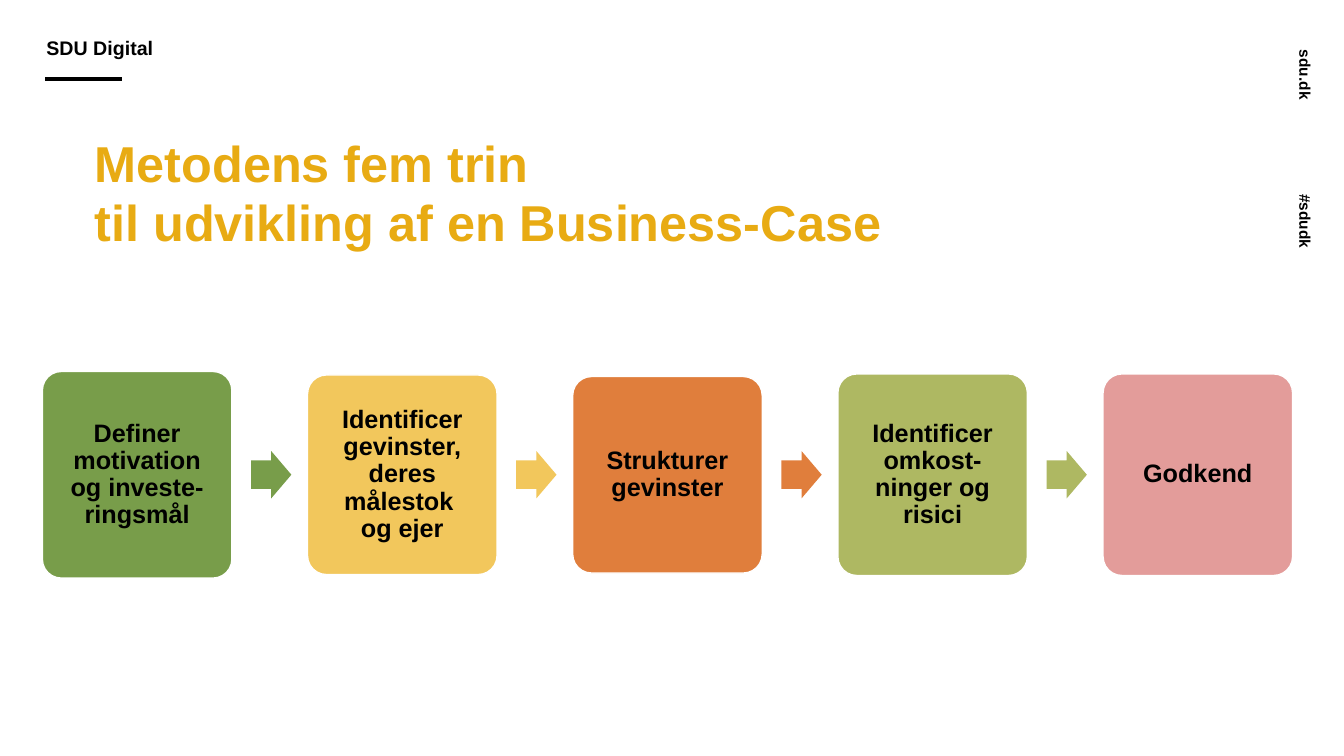
from dataclasses import dataclass

from lxml.etree import SubElement
from pptx import Presentation
from pptx.dml.color import RGBColor
from pptx.enum.shapes import MSO_CONNECTOR, MSO_SHAPE
from pptx.enum.text import MSO_ANCHOR, PP_ALIGN
from pptx.oxml.ns import qn
from pptx.shapes.autoshape import Shape
from pptx.slide import Slide
from pptx.util import Inches, Pt


@dataclass(frozen=True)
class Theme:
    font: str = "Arial"
    ink: str = "000000"
    edge: str = "FFFFFF"
    title: str = "E8AB13"
    title_size: int = 36
    step_size: int = 18
    header_size: int = 14
    side_size: int = 11


@dataclass(frozen=True)
class Step:
    text: str
    color: str
    height: float


@dataclass(frozen=True)
class Label:
    text: str
    box: tuple[float, float, float, float]
    size: int
    color: str
    anchor: MSO_ANCHOR = MSO_ANCHOR.BOTTOM
    margins: tuple[float, float, float, float] = (0, 0, 0, 0)
    spacing: float = 1.0
    rotation: float = 0


THEME = Theme()

STEPS = [
    Step("Definer motivation og investe-ringsmål", "789D4A", 2.05),
    Step("Identificer gevinster, deres målestok \nog ejer", "F2C75C", 1.98),
    Step("Strukturer\ngevinster", "E07E3C", 1.95),
    Step("Identificer omkost- ninger og risici", "AEB862", 2.0),
    Step("Godkend", "E39C9A", 2.0),
]
LEFT, PITCH, MIDDLE, STEP_WIDTH = 0.42, 2.63, 4.71, 1.88
ARROW_OFFSET, ARROW_WIDTH, ARROW_HEIGHT = 2.07, 0.4, 0.47

LABELS = [
    Label("SDU Digital", (0.45, 0.38, 5.54, 0.31), THEME.header_size, THEME.ink,
          margins=(0.01, 0, 0, 0.1), spacing=0.9),
    Label("Metodens fem trin\ntil udvikling af en Business-Case",
          (0.94, 1.35, 11.26, 1.4), THEME.title_size, THEME.title,
          anchor=MSO_ANCHOR.TOP, spacing=0.97),
    *(Label(text, (12.56, top, 1, 0.41), THEME.side_size, THEME.ink, rotation=90)
      for text, top in (("sdu.dk", 0.79), ("#sdudk", 2.22))),
]


def write(sp: Shape, text: str, size: int, color: str, anchor: MSO_ANCHOR,
          margins: tuple[float, float, float, float], spacing: float,
          align: PP_ALIGN = PP_ALIGN.LEFT) -> None:
    tf = sp.text_frame
    left, top, right, bottom = map(Inches, margins)
    frame_format = {
        "word_wrap": True, "vertical_anchor": anchor,
        "margin_left": left, "margin_top": top,
        "margin_right": right, "margin_bottom": bottom,
    }
    for name, value in frame_format.items():
        setattr(tf, name, value)
    p = tf.paragraphs[0]
    p.text = text.replace("\n", "\v")
    p.alignment, p.line_spacing = align, spacing
    for r in p.runs:
        for name, value in {"name": THEME.font, "size": Pt(size), "bold": True}.items():
            setattr(r.font, name, value)
        r.font.color.rgb = RGBColor.from_string(color)


def add_label(s: Slide, label: Label) -> None:
    sp = s.shapes.add_textbox(*map(Inches, label.box))
    sp.rotation = label.rotation
    write(sp, label.text, label.size, label.color, label.anchor,
          label.margins, label.spacing)


def add_block(s: Slide, kind: MSO_SHAPE, left: float, width: float, height: float,
              color: str, adjustments: tuple[float, ...]) -> Shape:
    """Add a filled shape centred on the row of steps."""
    box = (left, MIDDLE - height / 2, width, height)
    sp = s.shapes.add_shape(kind, *map(Inches, box))
    sp.shadow.inherit = False
    sp.fill.solid()
    sp.fill.fore_color.rgb = RGBColor.from_string(color)
    sp.line.fill.background()
    for i, value in enumerate(adjustments):
        sp.adjustments[i] = value
    return sp


def add_step(s: Slide, step: Step, left: float) -> None:
    sp = add_block(s, MSO_SHAPE.ROUNDED_RECTANGLE, left, STEP_WIDTH, step.height,
                   step.color, (0.1,))
    sp.line.color.rgb = RGBColor.from_string(THEME.edge)
    sp.line.width = Pt(1)
    write(sp, step.text, THEME.step_size, THEME.ink, MSO_ANCHOR.MIDDLE,
          (0.07,) * 4, 0.9, PP_ALIGN.CENTER)


def add_rule(s: Slide) -> None:
    rule = s.shapes.add_connector(MSO_CONNECTOR.STRAIGHT,
                                  *map(Inches, (0.45, 0.78, 1.21, 0.78)))
    rule.line.color.rgb = RGBColor.from_string(THEME.ink)
    rule.line.width = Pt(3)
    SubElement(rule._element.spPr, qn("a:effectLst"))


def main() -> None:
    prs = Presentation()
    prs.slide_width, prs.slide_height = Inches(13.33), Inches(7.5)
    s = prs.slides.add_slide(prs.slide_layouts[6])

    # Header, title and side labels
    add_rule(s)
    for label in LABELS:
        add_label(s, label)

    # Steps, each but the last followed by an arrow in its colour
    for i, step in enumerate(STEPS):
        left = LEFT + i * PITCH
        add_step(s, step, left)
        if i < len(STEPS) - 1:
            add_block(s, MSO_SHAPE.RIGHT_ARROW, left + ARROW_OFFSET, ARROW_WIDTH,
                      ARROW_HEIGHT, step.color, (0.6, 0.5))

    prs.save("out.pptx")


if __name__ == "__main__":
    main()
